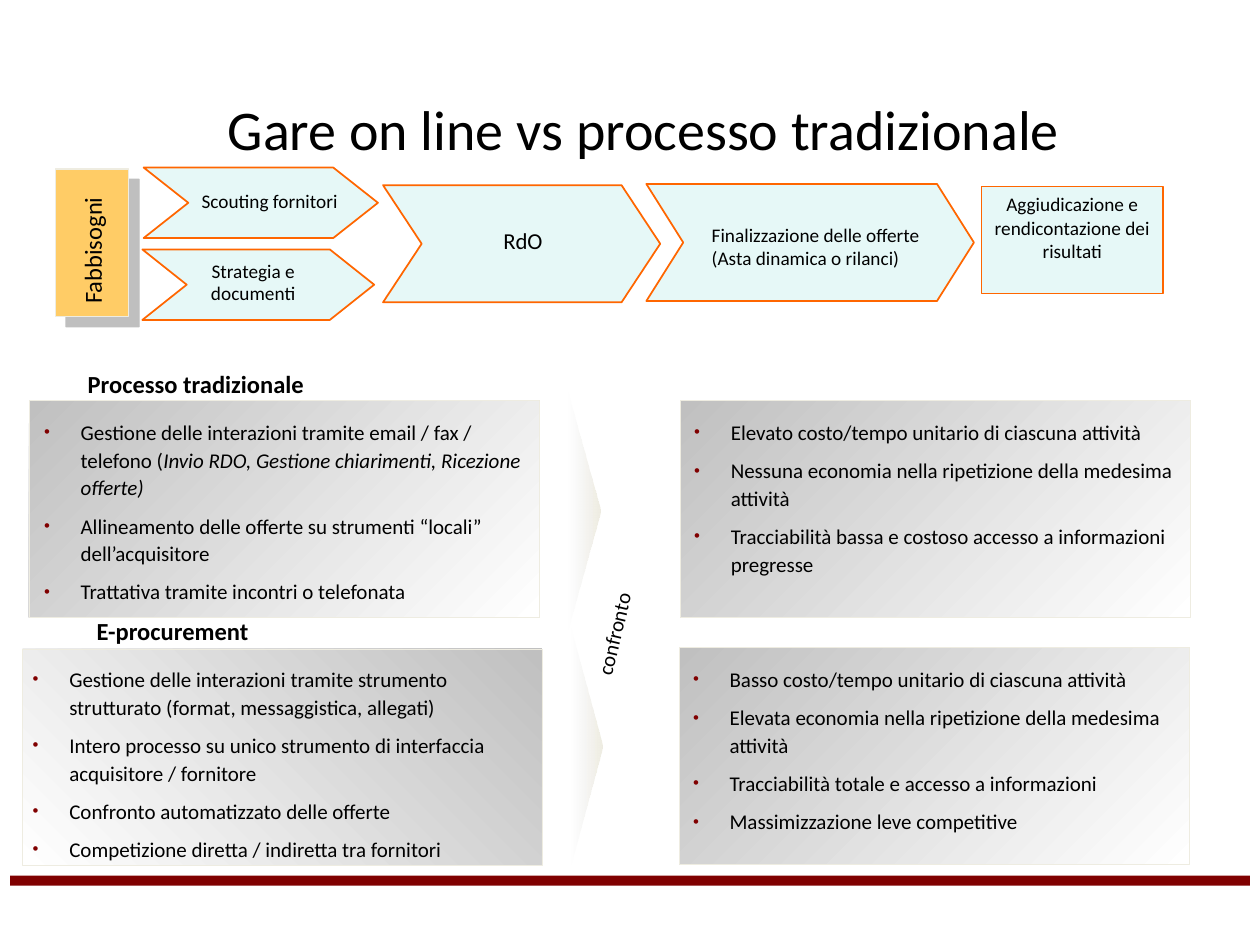
from lxml import etree
from pptx import Presentation
from pptx.dml.color import RGBColor
from pptx.enum.shapes import MSO_SHAPE as Form
from pptx.enum.text import MSO_ANCHOR as Anchor, MSO_AUTO_SIZE as Fit, PP_ALIGN as Align
from pptx.oxml import parse_xml
from pptx.oxml.ns import nsdecls, qn
from pptx.util import Inches, Pt

BLACK = RGBColor(0, 0, 0)
WHITE = RGBColor(255, 255, 255)
GRAY = RGBColor(0xC0, 0xC0, 0xC0)
PALE = RGBColor(0xEA, 0xEA, 0xEA)
SAND = RGBColor(0xEE, 0xEC, 0xE1)
AQUA = RGBColor(0xD5, 0xF3, 0xF2)
FLAME = RGBColor(0xFF, 0x66, 0x00)
GOLD = RGBColor(0xFF, 0xCC, 0x66)
WINE = RGBColor(0x80, 0, 0)
CELL = Inches(0.1)

STEPS = [
    ((30.4, 14.7, 22, 9.3), 0.33),
    ((11.4, 13.3, 18.6, 5.6), 0.634),
    ((51.3, 14.6, 26, 9.3), 0.315),
    ((11.3, 19.8, 18.4, 5.6), 0.629),
]
NAMES = [
    ("Scouting fornitori", (14.7, 13.4, 13.4, 5.3), dict(size=11, lead=0.95)),
    ("RdO", (33.8, 15.7, 15.4, 7), dict(size=13, lead=0.95)),
    ("Strategia e documenti", (14.1, 19.8, 12, 5.3), dict(size=11, lead=0.95)),
    ("Finalizzazione delle offerte (Asta dinamica o rilanci)",
     (55.5, 17.2, 18.9, 4.7), dict(size=11, align=Align.LEFT, anchor=Anchor.TOP)),
]
LISTS = [
    ((2.3, 31.8, 40.5, 17.2), (GRAY, WHITE, 315), (2.5, 32.6, 40.3, 16.4), [
        "Gestione delle interazioni tramite email / fax / telefono "
        "(*Invio RDO, Gestione chiarimenti, Ricezione offerte)*",
        "Allineamento delle offerte su strumenti “locali” dell’acquisitore",
        "Trattativa tramite incontri o telefonata"]),
    ((1.8, 51.5, 41.2, 17.2), (WHITE, GRAY, 45), (1.6, 52.2, 41.4, 17.4), [
        "Gestione delle interazioni tramite strumento strutturato "
        "(format, messaggistica, allegati)",
        "Intero processo su unico strumento di interfaccia acquisitore / fornitore",
        "Confronto automatizzato delle offerte",
        "Competizione diretta / indiretta tra fornitori"]),
    ((54, 31.8, 40.5, 17.2), (GRAY, WHITE, 315), (54.1, 32.6, 40.3, 14.1), [
        "Elevato costo/tempo unitario di ciascuna attività",
        "Nessuna economia nella ripetizione della medesima attività",
        "Tracciabilità bassa e costoso accesso a informazioni pregresse"]),
    ((53.9, 51.4, 40.5, 17.2), (GRAY, WHITE, 315), (54, 52.2, 40.3, 15.1), [
        "Basso costo/tempo unitario di ciascuna attività",
        "Elevata economia nella ripetizione della medesima attività",
        "Tracciabilità totale e accesso a informazioni",
        "Massimizzazione leve competitive"]),
]
HEADS = [
    ("Processo tradizionale", (5.9, 28.8, 19.3, 3.4)),
    ("E-procurement", (6.6, 48.4, 14.2, 3.4)),
]


def write(para, text, size=12, bold=False, align=Align.CENTER, lead=1, before=0):
    para.alignment = align
    para.line_spacing = lead
    para.space_before = Pt(before)
    for n, part in enumerate(text.split("*")):
        if part:
            run = para.add_run()
            run.text = part
            font = run.font
            font.name, font.size = "Calibri", Pt(size)
            font.bold, font.italic = bold, n % 2 == 1
            font.color.rgb = BLACK


def fade(node, share):
    color = next(node.iter(qn("a:srgbClr")))
    etree.SubElement(color, qn("a:alpha")).set("val", str(share * 1000))


def dot(para):
    props = para._p.get_or_add_pPr()
    props.set("marL", str(Inches(0.29)))
    props.set("indent", str(-Inches(0.29)))
    for tag, val in (
        ("buClr", f'><a:srgbClr val="{WINE}"/></a:buClr>'),
        ("buSzPct", ' val="80000"/>'),
        ("buFont", ' typeface="Arial"/>'),
        ("buChar", ' char="•"/>'),
    ):
        props.append(parse_xml(f'<a:{tag} {nsdecls("a")}{val}'))


class Board:
    def __init__(self, slide):
        self.slide = slide
        self.items = slide.shapes

    def area(self, box):
        return [round(v * CELL) for v in box]

    def shape(self, form, box, fill=None, line=None, width=1, adj=()):
        item = self.items.add_shape(form, *self.area(box))
        item.shadow.inherit = False
        for n, val in enumerate(adj):
            item.adjustments[n] = val
        if fill:
            item.fill.solid()
            item.fill.fore_color.rgb = fill
        if line:
            item.line.color.rgb = line
            item.line.width = Pt(width)
        else:
            item.line.fill.background()
        return item

    def blend(self, item, first, last, angle):
        item.fill.gradient()
        item.fill.gradient_angle = angle
        for stop, color in zip(item.fill.gradient_stops, (first, last)):
            stop.color.rgb = color

    def step(self, form, box, width=1, adj=()):
        item = self.shape(form, box, AQUA, FLAME, width, adj)
        fade(item._element.spPr.find(qn("a:solidFill")), 58)
        return item

    def fill_in(self, item, text, anchor=Anchor.TOP, wrap=True, **style):
        frame = item.text_frame
        frame.word_wrap = wrap
        frame.auto_size = Fit.NONE
        frame.vertical_anchor = anchor
        write(frame.paragraphs[0], text, **style)

    def label(self, text, box, turn=0, **style):
        item = self.items.add_textbox(*self.area(box))
        item.rotation = turn
        self.fill_in(item, text, **style)

    def place(self, item, box):
        item.left, item.top, item.width, item.height = self.area(box)
        self.items._spTree.append(item._element)

    def title(self, text, box):
        self.place(self.items.title, box)
        self.fill_in(self.items.title, text, anchor=Anchor.MIDDLE, size=32)

    def list(self, item, lines, box):
        self.place(item, box)
        frame = item.text_frame
        frame.auto_size = Fit.NONE
        frame.vertical_anchor = Anchor.TOP
        for n, text in enumerate(lines):
            para = frame.add_paragraph() if n else frame.paragraphs[0]
            dot(para)
            write(para, text, align=Align.LEFT, lead=1.1, before=6 if n else 0)

    def need(self, text, box):
        item = self.shape(Form.RECTANGLE, box, GOLD, SAND, 0.75)
        item.rotation = 180
        self.fill_in(item, text, anchor=Anchor.MIDDLE, wrap=False, size=14)
        item.text_frame._txBody.bodyPr.set("vert", "eaVert")
        glow = item._element.spPr.find(qn("a:effectLst"))
        glow.append(parse_xml(
            f'<a:outerShdw {nsdecls("a")} dist="{Pt(8.5)}" dir="2700000" algn="ctr" '
            'rotWithShape="0"><a:srgbClr val="808080"><a:alpha val="50000"/>'
            '</a:srgbClr></a:outerShdw>'))

    def arrow(self, box):
        item = self.shape(Form.UP_ARROW, box, adj=(1, 1))
        item.rotation = 90
        self.blend(item, SAND, PALE, 270)
        fade(list(item._element.spPr.iter(qn("a:gs")))[1], 0)


def main():
    deck = Presentation()
    deck.slide_width, deck.slide_height = 100 * CELL, 75 * CELL
    slide = deck.slides.add_slide(deck.slide_layouts[4])
    board = Board(slide)
    board.shape(Form.RECTANGLE, (0.8, 69.5, 98.4, 0.8), WINE)
    board.title("Gare on line vs processo tradizionale", (6.1, 3.9, 90, 12.5))
    for box, tip in STEPS:
        board.step(Form.CHEVRON, box, adj=(tip,))
    for text, box, style in NAMES:
        board.label(text, box, **{"anchor": Anchor.MIDDLE, **style})
    award = board.step(Form.RECTANGLE, (77.9, 14.8, 14.4, 8.5), 0.75)
    board.fill_in(award, "Aggiudicazione e rendicontazione dei risultati", size=11)
    board.need("Fabbisogni", (4.4, 13.4, 5.8, 11.7))
    for n, (box, tones, room, lines) in enumerate(LISTS, 1):
        panel = board.shape(Form.RECTANGLE, box, line=SAND, width=0.25)
        board.blend(panel, *tones)
        holder = next(p for p in slide.placeholders if p.placeholder_format.idx == n)
        board.list(holder, lines, room)
    for text, box in HEADS:
        board.label(text, box, size=14, bold=True, wrap=False)
    board.label("confronto", (43.8, 48.8, 9.8, 3), turn=283.4, wrap=False)
    for box in ((37, 39.3, 18.8, 2.5), (37.2, 58, 18.8, 2.5)):
        board.arrow(box)
    deck.save("out.pptx")


if __name__ == "__main__":
    main()
